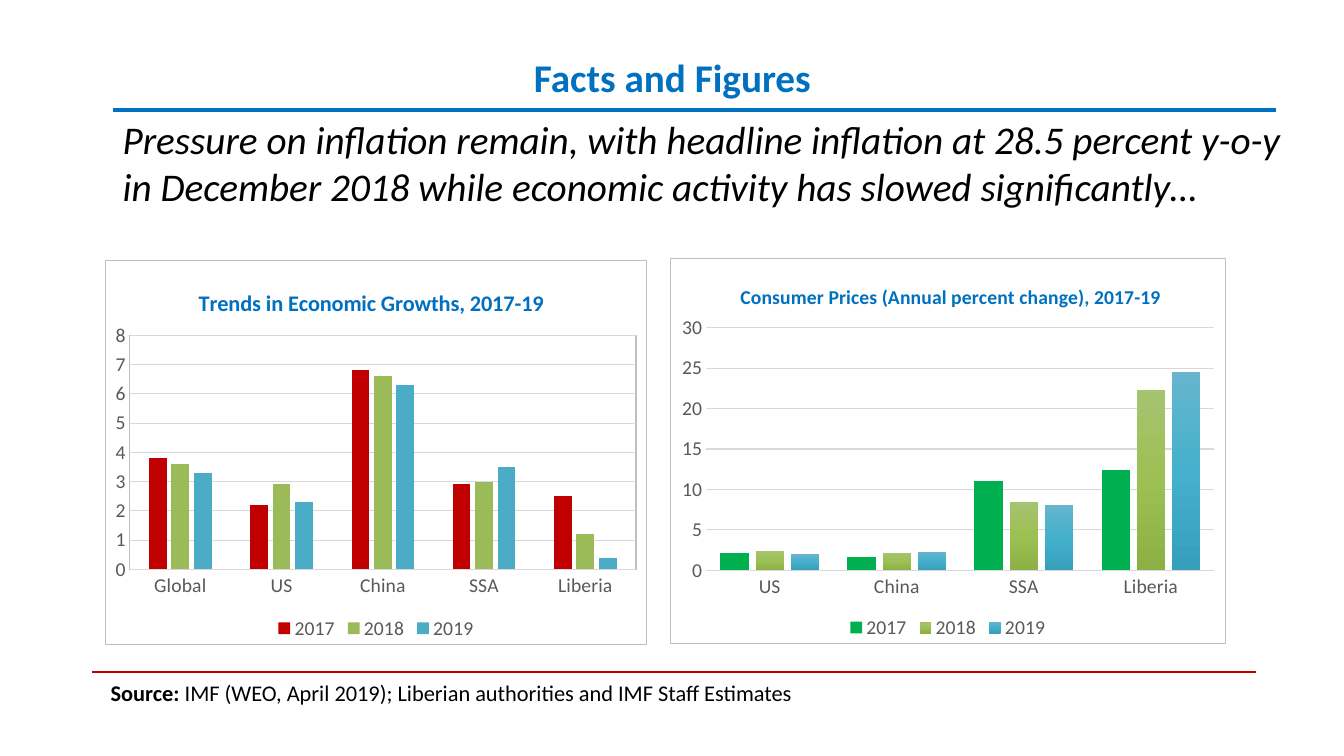
from pptx import Presentation
from pptx import util as u
from pptx.chart.data import CategoryChartData
from pptx.dml.color import RGBColor
from pptx.enum import chart as ch, shapes, text
from pptx.oxml import parse_xml
from pptx.oxml.ns import nsdecls, qn

HUES = {
    "blue": "0070C0", "red": "C00000", "green": "00B050",
    "lime": "9BBB59", "aqua": "4BACC6", "black": "000000",
    "gray": "595959", "grid": "D9D9D9", "edge": "BFBFBF",
}
FADES = {
    "lime fade": ("A6C36F", "9DC054", "8DB045"),
    "aqua fade": ("66B5CD", "45B0CC", "36A0BC"),
}
YEARS = ("2017", "2018", "2019")

GROWTH = {
    "box": (2.64, 6.55, 13.67, 9.7),
    "title": "Trends in Economic Growths, 2017-19",
    "size": 16,
    "spot": {"x": 0.165, "y": 0.06},
    "plot": {"x": 0.045, "y": 0.195, "w": 0.935, "h": 0.61},
    "cats": ("Global", "US", "China", "SSA", "Liberia"),
    "rows": ((3.8, 2.2, 6.8, 2.9, 2.5), (3.6, 2.9, 6.6, 3, 1.2),
             (3.3, 2.3, 6.3, 3.5, 0.4)),
    "fills": ("red", "lime", "aqua"),
    "bars": {"gap_width": 219, "overlap": -27},
    "scale": {"minimum_scale": 0, "maximum_scale": 8, "major_unit": 1},
    "base": 0.75,
    "frame": True,
}
PRICES = {
    "box": (16.87, 6.5, 14.02, 9.73),
    "title": "Consumer Prices (Annual percent change), 2017-19",
    "size": 14,
    "spot": {"x": 0.12, "y": 0.055},
    "plot": {"x": 0.065, "y": 0.18, "w": 0.915, "h": 0.63},
    "cats": ("US", "China", "SSA", "Liberia"),
    "rows": ((2.1, 1.6, 11, 12.4), (2.4, 2.1, 8.5, 22.3),
             (2, 2.3, 8.1, 24.5)),
    "fills": ("green", "lime fade", "aqua fade"),
    "bars": {"gap_width": 100, "overlap": -24},
    "scale": {"minimum_scale": 0, "maximum_scale": 30, "major_unit": 5},
    "base": 1,
    "frame": False,
}


def tint(name):
    return RGBColor.from_string(HUES[name])


def set_all(item, vals):
    for key, val in vals.items():
        setattr(item, key, val)


def set_font(font, hue, size, **more):
    set_all(font, {"name": "Calibri", "size": u.Pt(size), **more})
    font.color.rgb = tint(hue)


def set_line(line, hue, width):
    line.color.rgb = tint(hue)
    line.width = u.Pt(width)


def place(shape, box):
    sides = ("left", "top", "width", "height")
    set_all(shape, dict(zip(sides, map(u.Cm, box))))


def add_title(slide, words):
    title = slide.shapes.title
    place(title, (1.7, 1.27, 30.48, 1.35))
    title.text_frame.vertical_anchor = text.MSO_ANCHOR.MIDDLE
    para = title.text_frame.paragraphs[0]
    para.alignment = text.PP_ALIGN.CENTER
    run = para.add_run()
    run.text = words
    set_font(run.font, "blue", 28, bold=True)


def add_text(slide, box, size, runs):
    frame = slide.shapes.add_textbox(*map(u.Cm, box)).text_frame
    set_all(frame, {"word_wrap": True,
                    "auto_size": text.MSO_AUTO_SIZE.SHAPE_TO_FIT_TEXT})
    for words, style in runs:
        run = frame.paragraphs[0].add_run()
        run.text = words
        set_font(run.font, "black", size, **style)


def add_rule(slide, left, right, top, hue, width):
    rule = slide.shapes.add_connector(
        shapes.MSO_CONNECTOR.STRAIGHT, *map(u.Cm, (left, top, right, top)))
    set_line(rule.line, hue, width)
    rule._element.spPr.append(parse_xml(f"<a:effectLst {nsdecls('a')}/>"))


def set_spot(node, index, spot, inner=False):
    for old in node.findall(qn("c:layout")):
        node.remove(old)
    target = '<c:layoutTarget val="inner"/>' if inner else ""
    modes = '<c:xMode val="edge"/><c:yMode val="edge"/>'
    sizes = "".join(f'<c:{key} val="{val}"/>' for key, val in spot.items())
    node.insert(index, parse_xml(
        f"<c:layout {nsdecls('c')}><c:manualLayout>{target}{modes}{sizes}"
        "</c:manualLayout></c:layout>"))


def make_edge(hue):
    return parse_xml(
        f"<c:spPr {nsdecls('c', 'a')}><a:ln w=\"9525\"><a:solidFill>"
        f'<a:srgbClr val="{HUES[hue]}"/></a:solidFill></a:ln></c:spPr>')


def fill_bars(bars, name):
    fill = bars.format.fill
    if name in HUES:
        fill.solid()
        fill.fore_color.rgb = tint(name)
        return
    fill.gradient()
    fill.gradient_angle = 270
    stops = bars._element.find(".//" + qn("a:gsLst"))
    stops.clear()
    for step, shade in enumerate(FADES[name]):
        stops.append(parse_xml(
            f"<a:gs {nsdecls('a')} pos=\"{step * 50000}\">"
            f'<a:srgbClr val="{shade}"/></a:gs>'))


def add_bars(slide, info):
    data = CategoryChartData()
    data.categories = info["cats"]
    for year, row in zip(YEARS, info["rows"]):
        data.add_series(year, row)
    chart = slide.shapes.add_chart(
        ch.XL_CHART_TYPE.COLUMN_CLUSTERED,
        *map(u.Cm, info["box"]), data).chart
    set_font(chart.font, "black", 14)

    chart.has_title = True
    para = chart.chart_title.text_frame.paragraphs[0]
    run = para.add_run()
    run.text = info["title"]
    set_font(run.font, "blue", info["size"], bold=True)
    set_spot(chart.chart_title._element, 1, info["spot"])

    chart.has_legend = True
    set_all(chart.legend, {"position": ch.XL_LEGEND_POSITION.BOTTOM,
                           "include_in_layout": False})
    set_font(chart.legend.font, "gray", 14)

    for axis in (chart.category_axis, chart.value_axis):
        set_all(axis, {"major_tick_mark": ch.XL_TICK_MARK.NONE,
                       "minor_tick_mark": ch.XL_TICK_MARK.NONE})
        set_font(axis.tick_labels.font, "gray", 14)
    set_line(chart.category_axis.format.line, "grid", info["base"])
    set_all(chart.value_axis, info["scale"])
    chart.value_axis.format.line.fill.background()
    set_line(chart.value_axis.major_gridlines.format.line, "grid", 0.75)

    plot = chart.plots[0]
    set_all(plot, {"vary_by_categories": False, **info["bars"]})
    for bars, name in zip(plot.series, info["fills"]):
        fill_bars(bars, name)

    body = chart._chartSpace.find(qn("c:chart"))
    area = body.find(qn("c:plotArea"))
    set_spot(area, 0, info["plot"], inner=True)
    if info["frame"]:
        area.append(make_edge("edge"))
    body.addnext(make_edge("edge"))


def main():
    deck = Presentation()
    set_all(deck, {"slide_width": u.Cm(33.86), "slide_height": u.Cm(19.05)})
    slide = deck.slides.add_slide(deck.slide_layouts[5])
    add_title(slide, "Facts and Figures")
    add_rule(slide, 2.84, 32.16, 2.77, "blue", 3.25)
    add_rule(slide, 2.31, 31.65, 16.94, "red", 1.5)
    add_bars(slide, GROWTH)
    add_text(slide, (2.54, 16.99, 29.64, 0.94), 16, (
        ("Source: ", {"bold": True}),
        ("IMF (WEO, April 2019); Liberian authorities and IMF Staff Estimates",
         {"bold": False})))
    add_bars(slide, PRICES)
    add_text(slide, (2.84, 2.77, 29.74, 2.64), 28, (
        ("Pressure on inflation remain, with headline inflation at 28.5 "
         "percent y-o-y in December 2018 while economic activity has slowed "
         "significantly…", {"italic": True}),))
    deck.save("out.pptx")


if __name__ == "__main__":
    main()
